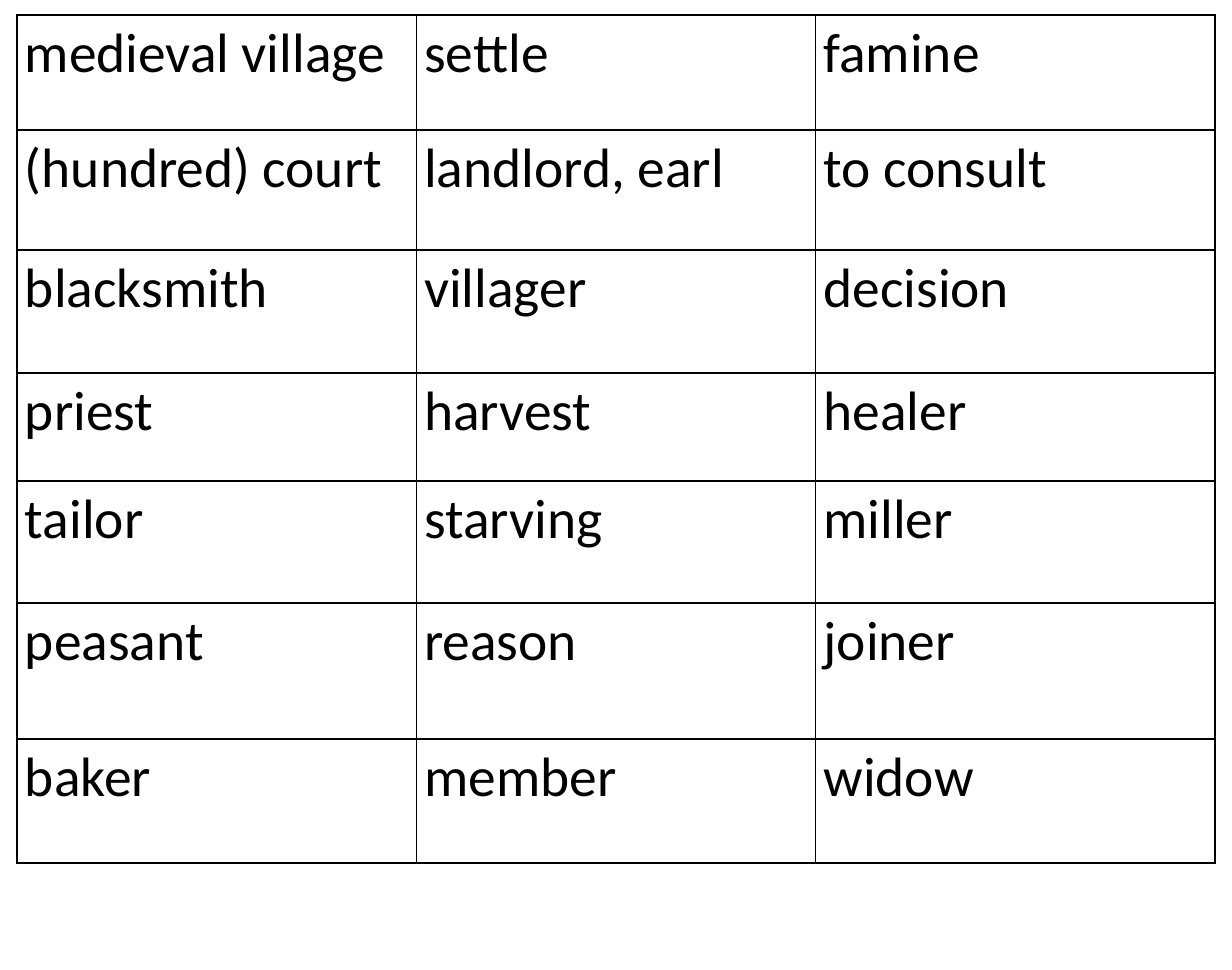
from lxml import etree
from pptx import Presentation
from pptx.dml.color import RGBColor
from pptx.oxml.ns import qn
from pptx.util import Pt

# Content
WORDS = [
    ("medieval village", "settle", "famine"),
    ("(hundred) court", "landlord, earl", "to consult"),
    ("blacksmith", "villager", "decision"),
    ("priest", "harvest", "healer"),
    ("tailor", "starving", "miller"),
    ("peasant", "reason", "joiner"),
    ("baker", "member", "widow"),
]

# Layout in px
PX = 8245
SLIDE_WIDTH, SLIDE_HEIGHT = 1232, 970
TABLE_LEFT, TABLE_TOP, TABLE_WIDTH = 17, 15, 1198
ROW_HEIGHTS = [115, 120, 123, 108, 122, 136, 124]
SIDE_MARGIN, TOP_MARGIN = 8, 5

COLORS = {"ink": "000000", "paper": "FFFFFF"}
FONT_NAME, FONT_SIZE = "Calibri", Pt(36)
BORDER_WIDTH = Pt(1)


def px(length):
    return round(length * PX)


def color(name):
    return RGBColor.from_string(COLORS[name])


def add_borders(cell):
    properties = cell._tc.get_or_add_tcPr()
    for position, side in enumerate(("a:lnL", "a:lnR", "a:lnT", "a:lnB")):
        line = etree.Element(qn(side), w=str(BORDER_WIDTH))
        fill = etree.SubElement(line, qn("a:solidFill"))
        etree.SubElement(fill, qn("a:srgbClr"), val=COLORS["ink"])
        properties.insert(position, line)


def format_cell(cell, word):
    cell.text_frame.text = word
    cell.margin_left = cell.margin_right = px(SIDE_MARGIN)
    cell.margin_top = cell.margin_bottom = px(TOP_MARGIN)
    cell.fill.solid()
    cell.fill.fore_color.rgb = color("paper")
    font = cell.text_frame.paragraphs[0].runs[0].font
    font.name, font.size = FONT_NAME, FONT_SIZE
    font.color.rgb = color("ink")
    add_borders(cell)


def main():
    presentation = Presentation()
    presentation.slide_width = px(SLIDE_WIDTH)
    presentation.slide_height = px(SLIDE_HEIGHT)
    slide = presentation.slides.add_slide(presentation.slide_layouts[6])

    # Vocabulary table: equal columns, individual row heights
    table = slide.shapes.add_table(
        len(WORDS), len(WORDS[0]), px(TABLE_LEFT), px(TABLE_TOP),
        px(TABLE_WIDTH), px(sum(ROW_HEIGHTS))).table
    table.first_row = table.horz_banding = False
    for row, height in zip(table.rows, ROW_HEIGHTS):
        row.height = px(height)
    for row, words in zip(table.rows, WORDS):
        for cell, word in zip(row.cells, words):
            format_cell(cell, word)

    presentation.save("out.pptx")


if __name__ == "__main__":
    main()
